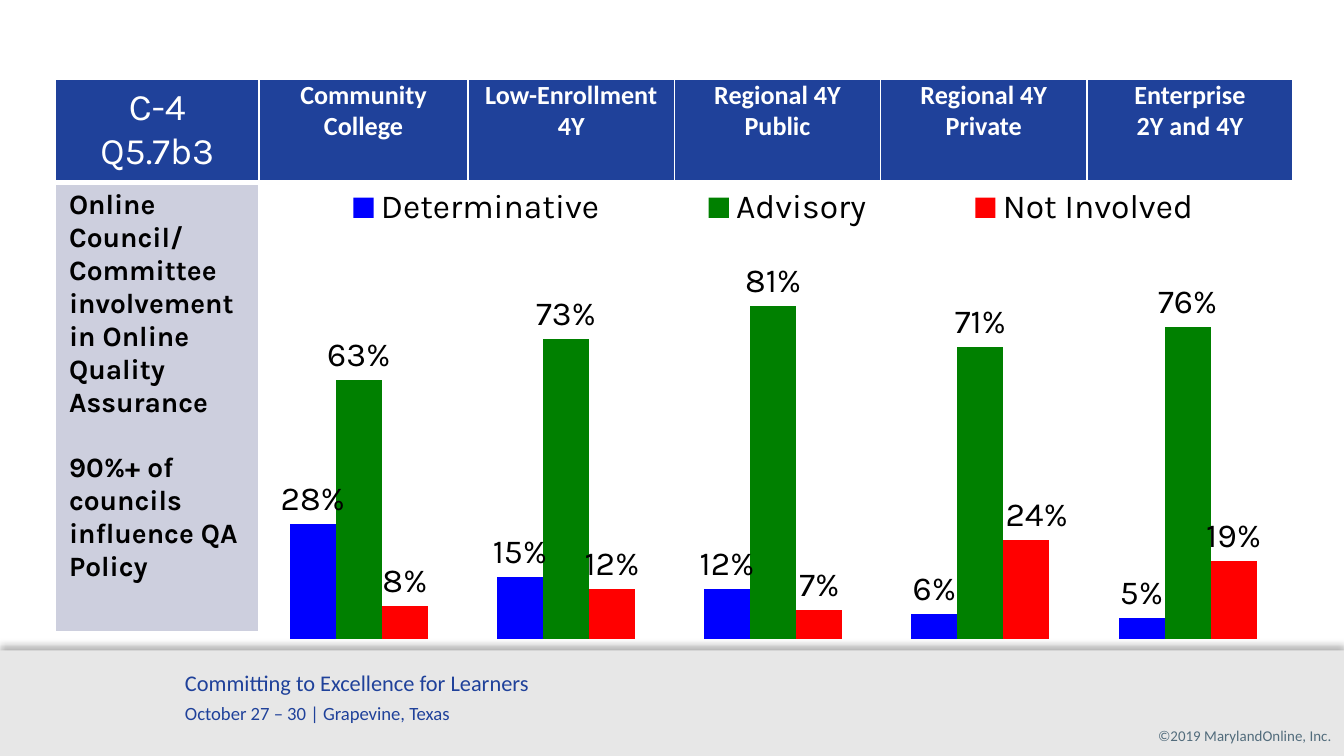
import pptx
import pptx.chart.data
import pptx.dml.color
import pptx.enum.chart
import pptx.enum.shapes
import pptx.enum.text
import pptx.oxml
import pptx.oxml.ns
import pptx.util
from dataclasses import dataclass
from typing import Any, Optional

Pt = pptx.util.Pt
ALIGN = pptx.enum.text.PP_ALIGN
LABEL_POSITION = pptx.enum.chart.XL_LABEL_POSITION

COLORS = {
    "white": "FFFFFF", "black": "000000", "navy": "1F419A", "lilac": "CDCFDE",
    "band": "E7E7E7", "slate": "526C7C",
    "blue": "0000FF", "green": "008000", "red": "FF0000",
}
CELL_MARGINS = {"margin_left": Pt(5), "margin_right": Pt(5), "margin_top": 0, "margin_bottom": 0}
HIDDEN_AXIS = {"visible": False, "has_major_gridlines": False, "has_minor_gridlines": False}
PERCENT_LABELS = {
    "show_value": True, "number_format": "0%", "number_format_is_linked": False,
    "position": LABEL_POSITION.OUTSIDE_END,
}
NAMESPACES = pptx.oxml.ns.nsdecls("a")
CHART_NAMESPACES = pptx.oxml.ns.nsdecls("c")


@dataclass
class Style:
    name: str
    size: float
    color: str
    bold: bool = False


@dataclass
class Line:
    text: str
    style: Style
    align: Any = ALIGN.LEFT
    before: float = 0


@dataclass
class Involvement:
    name: str
    shares: tuple
    color: str


CODE = Style("Karla", 20, "white")
INSTITUTION = Style("Calibri", 14, "white", True)
QUESTION = Style("Karla", 15, "black", True)
CHART_TEXT = Style("Karla", 18, "black")

INSTITUTIONS = [
    ["Community College"], ["Low-Enrollment 4Y"], ["Regional 4Y Public"],
    ["Regional 4Y Private"], ["Enterprise", "2Y and 4Y"],
]
INVOLVEMENTS = [
    Involvement("Determinative", (0.28, 0.15, 0.12, 0.06, 0.05), "blue"),
    Involvement("Advisory", (0.63, 0.73, 0.81, 0.71, 0.76), "green"),
    Involvement("Not Involved", (0.08, 0.12, 0.07, 0.24, 0.19), "red"),
]


def apply(target: Any, values: dict) -> None:
    for attribute, value in values.items():
        setattr(target, attribute, value)


def rgb(color: str) -> pptx.dml.color.RGBColor:
    return pptx.dml.color.RGBColor.from_string(COLORS[color])


def paint(fill: Any, color: str) -> None:
    fill.solid()
    fill.fore_color.rgb = rgb(color)


def style_font(font: Any, style: Style) -> None:
    apply(font, {"name": style.name, "size": Pt(style.size), "bold": style.bold})
    font.color.rgb = rgb(style.color)


def write(frame: Any, lines: list[Line]) -> None:
    frame.word_wrap = True
    for index, line in enumerate(lines):
        paragraph = frame.add_paragraph() if index else frame.paragraphs[0]
        apply(paragraph, {"alignment": line.align, "space_before": Pt(line.before)})
        run = paragraph.add_run()
        run.text = line.text
        style_font(run.font, line.style)


def add_text(slide: Any, box: tuple, lines: list[Line], margins: Optional[dict] = None) -> None:
    frame = slide.shapes.add_textbox(*map(Pt, box)).text_frame
    apply(frame, margins or {})
    write(frame, lines)


def add_footer(slide: Any) -> None:
    band = slide.shapes.add_shape(
        pptx.enum.shapes.MSO_SHAPE.RECTANGLE, 0, Pt(348.5), Pt(720), Pt(56.5))
    paint(band.fill, "band")
    band.line.fill.background()
    band.shadow.inherit = False
    effects = band._element.spPr.find(pptx.oxml.ns.qn("a:effectLst"))
    effects.append(pptx.oxml.parse_xml(
        f'<a:outerShdw {NAMESPACES} blurRad="{Pt(4)}" dist="{Pt(3)}" dir="16200000" rotWithShape="0">'
        f'<a:srgbClr val="{COLORS["black"]}"><a:alpha val="30000"/></a:srgbClr></a:outerShdw>'))
    add_text(slide, (599, 386, 114.5, 17),
             [Line("©2019 MarylandOnline, Inc.", Style("Calibri", 8, "slate"), ALIGN.RIGHT)],
             {"margin_right": 0})
    add_text(slide, (92, 355, 212, 37), [
        Line("Committing to Excellence for Learners", Style("Calibri", 12, "navy")),
        Line("October 27 – 30 | Grapevine, Texas", Style("Calibri", 10, "navy"), before=3),
    ])


def format_cell(cell: Any, lines: list[Line], color: Optional[str], bottom: float = 1) -> None:
    write(cell.text_frame, lines)
    properties = cell._tc.get_or_add_tcPr()
    for side, width in {"L": 1, "R": 1, "T": 1, "B": bottom}.items():
        properties.append(pptx.oxml.parse_xml(
            f'<a:ln{side} {NAMESPACES} w="{Pt(width)}"><a:solidFill>'
            f'<a:srgbClr val="{COLORS["white"]}"/></a:solidFill></a:ln{side}>'))
    if color:
        paint(cell.fill, color)
    else:
        cell.fill.background()


def add_question_table(slide: Any) -> None:
    table = slide.shapes.add_table(2, 6, Pt(29.8), Pt(42.5), Pt(663), Pt(296)).table
    for column, width in zip(table.columns, [109, 112] + [110.5] * 4):
        column.width = Pt(width)
    for row, height in zip(table.rows, [55, 241]):
        row.height = Pt(height)
    format_cell(table.cell(0, 0), [Line("C-4 Q5.7b3", CODE, ALIGN.CENTER)], "navy", 3)
    for column, names in enumerate(INSTITUTIONS, 1):
        cell = table.cell(0, column)
        apply(cell, CELL_MARGINS)
        format_cell(cell, [Line(name, INSTITUTION, ALIGN.CENTER) for name in names], "navy", 3)
    format_cell(table.cell(1, 0), [
        Line("Online Council/ Committee involvement in Online Quality Assurance", QUESTION),
        Line("90%+ of councils influence QA Policy", QUESTION, before=17.5),
    ], "lilac")
    table.cell(1, 1).merge(table.cell(1, 5))
    for column in range(1, 6):
        format_cell(table.cell(1, column), [], None)


def place(element: Any, index: int, **values: Any) -> None:
    for old in element.findall(pptx.oxml.ns.qn("c:layout")):
        element.remove(old)
    settings = "".join(f'<c:{key} val="{value}"/>' for key, value in values.items())
    element.insert(index, pptx.oxml.parse_xml(
        f"<c:layout {CHART_NAMESPACES}><c:manualLayout>{settings}</c:manualLayout></c:layout>"))


def add_involvement_chart(slide: Any) -> None:
    data = pptx.chart.data.CategoryChartData(number_format="0%")
    data.categories = ["1", "2", "3", "4", "5"]
    for involvement in INVOLVEMENTS:
        data.add_series(involvement.name, involvement.shares)
    chart = slide.shapes.add_chart(
        pptx.enum.chart.XL_CHART_TYPE.COLUMN_CLUSTERED,
        Pt(136.8), Pt(91.5), Pt(555), Pt(264), data).chart
    apply(chart, {"has_title": False, "has_legend": True})
    style_font(chart.font, CHART_TEXT)
    for axis in (chart.category_axis, chart.value_axis):
        apply(axis, HIDDEN_AXIS)
    apply(chart.value_axis, {"minimum_scale": 0, "maximum_scale": 0.9})
    apply(chart.legend, {"position": pptx.enum.chart.XL_LEGEND_POSITION.TOP,
                         "include_in_layout": False})
    style_font(chart.legend.font, CHART_TEXT)
    plot = chart.plots[0]
    apply(plot, {"gap_width": 150, "overlap": 0, "vary_by_categories": False})
    for series, involvement in zip(plot.series, INVOLVEMENTS):
        paint(series.format.fill, involvement.color)
        series.invert_if_negative = False
        apply(series.data_labels, PERCENT_LABELS)
        style_font(series.data_labels.font, CHART_TEXT)
    private_label = plot.series[2].points[3].data_label
    private_label.position = LABEL_POSITION.OUTSIDE_END
    style_font(private_label.font, CHART_TEXT)
    label_element = plot.series[2].data_labels._element.find(pptx.oxml.ns.qn("c:dLbl"))
    label_element.insert(1, pptx.oxml.parse_xml(
        f'<c:numFmt {CHART_NAMESPACES} formatCode="0%" sourceLinked="0"/>'))
    place(label_element, 1, x=0.01, y=0)
    edges = {"xMode": "edge", "yMode": "edge"}
    place(chart.legend._element, 1, **edges, x=0, y=0.02, w=1, h=0.11)
    place(chart._chartSpace.chart.plotArea, 0, layoutTarget="inner", **edges,
          x=0, y=0.2, w=1, h=0.75)


def main() -> None:
    deck = pptx.Presentation()
    apply(deck, {"slide_width": Pt(720), "slide_height": Pt(405)})
    slide = deck.slides.add_slide(deck.slide_layouts[6])
    add_footer(slide)
    add_question_table(slide)
    add_involvement_chart(slide)
    deck.save("out.pptx")


if __name__ == "__main__":
    main()
